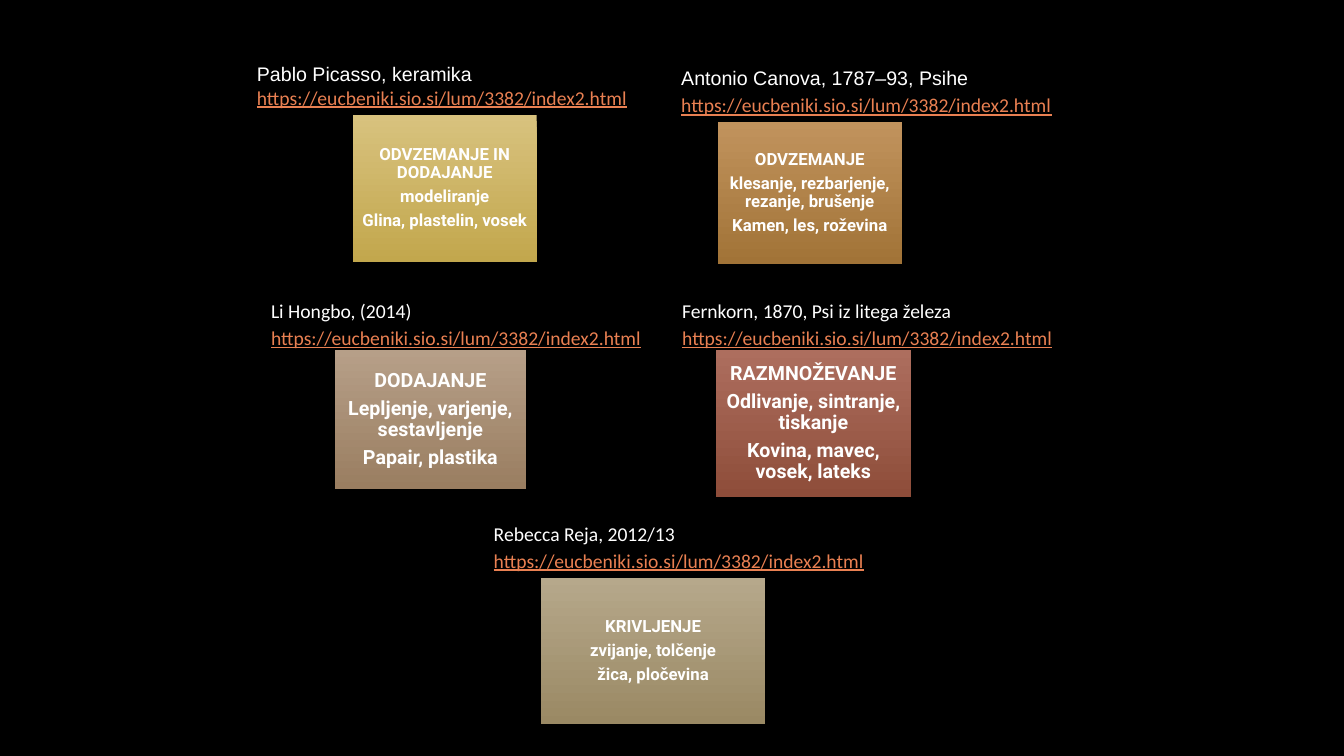
"""Build a slide of five sculpting techniques, each with a captioned artwork source."""
from typing import NamedTuple

from pptx import Presentation
from pptx.dml.color import RGBColor
from pptx.enum.shapes import MSO_SHAPE
from pptx.enum.text import MSO_ANCHOR, PP_ALIGN
from pptx.slide import Slide
from pptx.text.text import _Paragraph
from pptx.util import Pt

RECTANGLE = MSO_SHAPE.RECTANGLE
MIDDLE = MSO_ANCHOR.MIDDLE
TOP = MSO_ANCHOR.TOP
CENTER = PP_ALIGN.CENTER
LEFT = PP_ALIGN.LEFT

COLORS = {
    "background": "000000",
    "text": "FFFFFF",
    "address": "E98052",
    "gold_light": "D8C27E",
    "gold_dark": "C2A74D",
    "bronze_light": "C1935D",
    "bronze_dark": "A17337",
    "clay_light": "B69F88",
    "clay_dark": "9A7E61",
    "rust_light": "AD6E5E",
    "rust_dark": "8E4D3A",
    "sand_light": "B6A88B",
    "sand_dark": "9A8964",
}
ADDRESS = "https://eucbeniki.sio.si/lum/3382/index2.html"
CAPTION_SIZE = 14


class Bounds(NamedTuple):
    left: float
    top: float
    width: float
    height: float


class Technique(NamedTuple):
    bounds: Bounds
    tone: str
    size: int
    lines: tuple[str, ...]


class Caption(NamedTuple):
    bounds: Bounds
    artwork: str
    font: str = "Calibri"
    address_spacing: float = 1.15


TECHNIQUES = (
    Technique(Bounds(252, 82.1, 131.4, 104.8), "gold", 12,
              ("ODVZEMANJE IN DODAJANJE", "modeliranje", "Glina, plastelin, vosek")),
    Technique(Bounds(512.6, 87.1, 131.8, 101.5), "bronze", 12,
              ("ODVZEMANJE", "klesanje, rezbarjenje, rezanje, brušenje",
               "Kamen, les, roževina")),
    Technique(Bounds(239.3, 249.8, 136.4, 99.4), "clay", 14,
              ("DODAJANJE", "Lepljenje, varjenje, sestavljenje", "Papair, plastika")),
    Technique(Bounds(511.2, 249.8, 139.7, 105.1), "rust", 14,
              ("RAZMNOŽEVANJE", "Odlivanje, sintranje, tiskanje",
               "Kovina, mavec, vosek, lateks")),
    Technique(Bounds(386.6, 412.6, 160, 104.4), "sand", 12,
              ("KRIVLJENJE", "zvijanje, tolčenje", "žica, pločevina")),
)
CAPTIONS = (
    Caption(Bounds(176.4, 38.2, 287.3, 43.9), "Pablo Picasso, keramika", "Arial", 1.0),
    Caption(Bounds(479.5, 41, 281.5, 46.1), "Antonio Canova, 1787–93, Psihe", "Arial"),
    Caption(Bounds(186.5, 207.4, 286.6, 46.1), "Li Hongbo, (2014)"),
    Caption(Bounds(480.2, 207.4, 288, 46.1), "Fernkorn, 1870, Psi iz litega železa"),
    Caption(Bounds(345.6, 366.5, 311.8, 46.1), "Rebecca Reja, 2012/13"),
)


def rgb(name: str) -> RGBColor:
    """Look up a named colour."""
    return RGBColor.from_string(COLORS[name])


def style_paragraph(paragraph: _Paragraph, font: str, size: int, color: str,
                    spacing: float, after: float = 0, align: PP_ALIGN = LEFT,
                    bold: bool = False, underline: bool = False) -> None:
    """Format a paragraph and all its runs."""
    paragraph.alignment = align
    paragraph.line_spacing = spacing
    paragraph.space_after = Pt(after)
    for run in paragraph.runs:
        run.font.name = font
        run.font.size = Pt(size)
        run.font.bold = bold
        run.font.underline = underline
        run.font.color.rgb = rgb(color)


def draw_technique(slide: Slide, technique: Technique) -> None:
    """Draw a gradient panel naming a technique, its methods and materials."""
    panel = slide.shapes.add_shape(RECTANGLE, *map(Pt, technique.bounds))
    panel.shadow.inherit = False
    panel.line.fill.background()
    panel.fill.gradient()
    panel.fill.gradient_angle = 270
    for stop, position, shade in zip(panel.fill.gradient_stops, (0, 1), ("light", "dark")):
        stop.position = position
        stop.color.rgb = rgb(f"{technique.tone}_{shade}")
    frame = panel.text_frame
    frame.word_wrap = True
    frame.vertical_anchor = MIDDLE
    inset = Pt(technique.size * 0.3)
    frame.margin_left = frame.margin_right = inset
    frame.margin_top = frame.margin_bottom = inset
    frame.text = "\n".join(technique.lines)
    for paragraph in frame.paragraphs:
        style_paragraph(paragraph, "Roboto", technique.size, "text", 0.9,
                        after=technique.size * 0.35, align=CENTER, bold=True)


def draw_caption(slide: Slide, caption: Caption) -> None:
    """Draw an artwork credit above its web address."""
    frame = slide.shapes.add_textbox(*map(Pt, caption.bounds)).text_frame
    frame.word_wrap = True
    frame.vertical_anchor = TOP
    frame.text = f"{caption.artwork}\n{ADDRESS}"
    artwork, address = frame.paragraphs
    style_paragraph(artwork, caption.font, CAPTION_SIZE, "text", 1.15)
    style_paragraph(address, "Calibri", CAPTION_SIZE, "address",
                    caption.address_spacing, underline=True)


def main() -> None:
    """Assemble and save the slide."""
    presentation = Presentation()
    presentation.slide_width = Pt(960)
    presentation.slide_height = Pt(540)
    slide = presentation.slides.add_slide(presentation.slide_layouts[6])
    slide.background.fill.solid()
    slide.background.fill.fore_color.rgb = rgb("background")
    for technique in TECHNIQUES:
        draw_technique(slide, technique)
    for caption in CAPTIONS:
        draw_caption(slide, caption)
    presentation.save("out.pptx")


if __name__ == "__main__":
    main()
